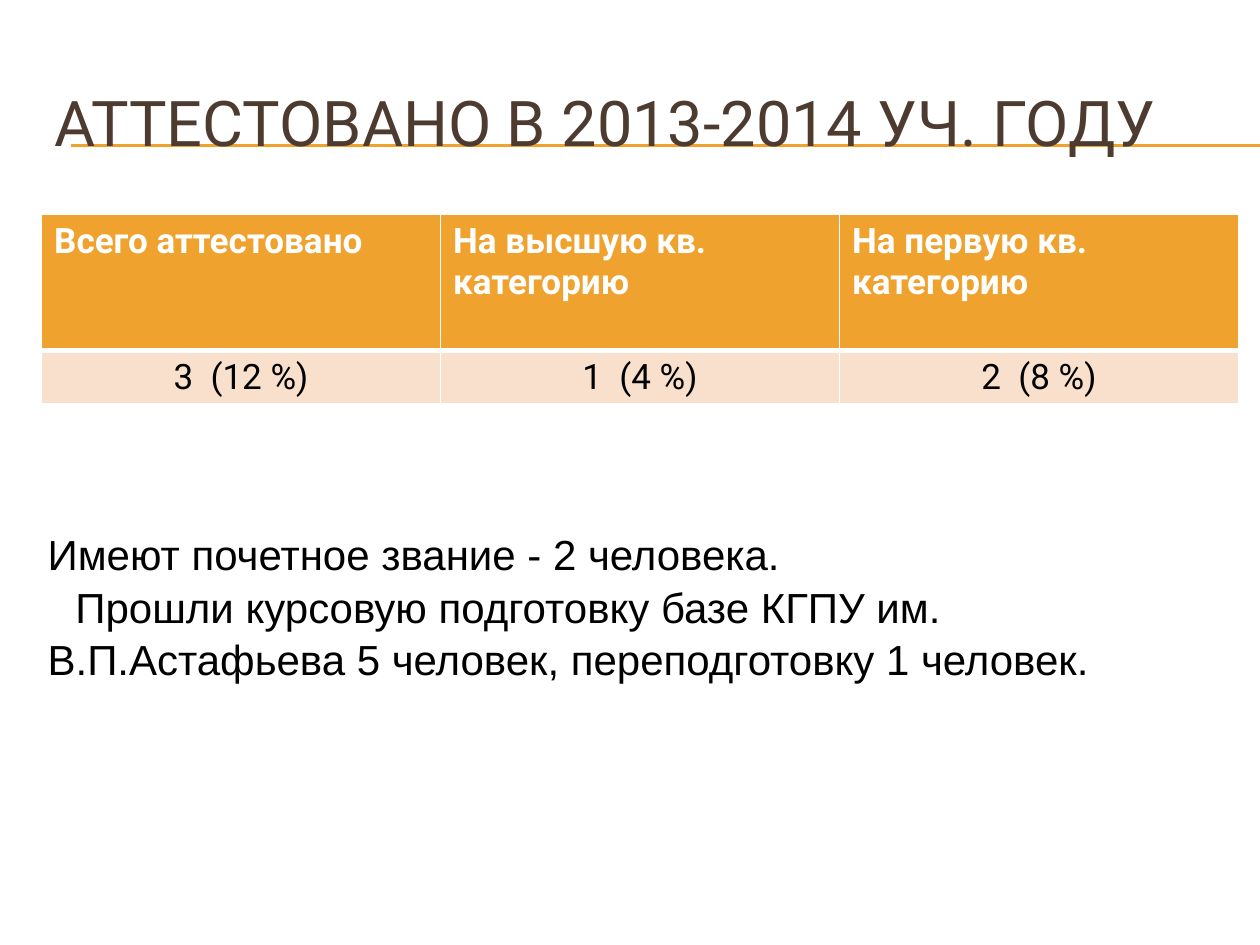
from lxml import etree
from pptx import Presentation
from pptx.dml.color import RGBColor
from pptx.enum.shapes import MSO_CONNECTOR
from pptx.enum.text import MSO_ANCHOR, PP_ALIGN
from pptx.oxml.ns import qn
from pptx.util import Inches, Pt

STRAIGHT = MSO_CONNECTOR.STRAIGHT
LEFT, CENTER = PP_ALIGN.LEFT, PP_ALIGN.CENTER
MIDDLE, BOTTOM = MSO_ANCHOR.MIDDLE, MSO_ANCHOR.BOTTOM

ORANGE = RGBColor(0xF0, 0xA2, 0x2E)
PEACH = RGBColor(0xF9, 0xE0, 0xCD)
BROWN = RGBColor(0x4E, 0x3B, 0x30)
WHITE = RGBColor(0xFF, 0xFF, 0xFF)
BLACK = RGBColor(0, 0, 0)

TITLE = "АТТЕСТОВАНО В 2013-2014 УЧ. ГОДУ"
HEADERS = ["Всего аттестовано", "На высшую кв. категорию", "На первую кв. категорию"]
RESULTS = ["3  (12 %)", "1  (4 %)", "2  (8 %)"]
NOTES = [
    ("Имеют почетное звание - 2 человека.", 0),
    ("Прошли курсовую подготовку базе КГПУ им. В.П.Астафьева 5 человек, "
     "переподготовку 1 человек.", 0.22),
]


def format_runs(p, font, size, color, bold=False):
    for r in p.runs:
        r.font.name = font
        r.font.size = Pt(size)
        r.font.bold = bold
        r.font.color.rgb = color


def add_rule(slide, y):
    line = slide.shapes.add_connector(STRAIGHT, Inches(0.56), Inches(y), Inches(10), Inches(y))
    line.line.color.rgb = ORANGE
    line.line.width = Pt(0.75)
    etree.SubElement(line._element.spPr, qn("a:effectLst"))


def set_title(slide):
    title = slide.shapes.title
    title.left, title.top = Inches(0.33), Inches(0.5)
    title.width, title.height = Inches(9.5), Inches(0.92)
    tf = title.text_frame
    tf.text = TITLE
    tf.vertical_anchor = MIDDLE
    p = tf.paragraphs[0]
    p.alignment = LEFT
    format_runs(p, "Roboto", 36, BROWN)


def set_borders(cell, bottom):
    """Draw white 1 pt borders, with the bottom one of the given width."""
    tcPr = cell._tc.get_or_add_tcPr()
    widths = {"a:lnL": 1, "a:lnR": 1, "a:lnT": 1, "a:lnB": bottom}
    for i, (tag, width) in enumerate(widths.items()):
        ln = etree.Element(qn(tag), w=str(Pt(width)))
        fill = etree.SubElement(ln, qn("a:solidFill"))
        etree.SubElement(fill, qn("a:srgbClr"), val=str(WHITE))
        tcPr.insert(i, ln)


def fill_row(table, row, texts, fill, color, align, bold, bottom):
    for cell, text in zip(table.rows[row].cells, texts):
        cell.text = text
        cell.fill.solid()
        cell.fill.fore_color.rgb = fill
        p = cell.text_frame.paragraphs[0]
        p.alignment = align
        format_runs(p, "Roboto", 20, color, bold)
        set_borders(cell, bottom)


def add_results_table(slide):
    frame = slide.shapes.add_table(2, len(HEADERS), Inches(0.33), Inches(1.7),
                                   Inches(9.5), Inches(1.5))
    table = frame.table
    table.rows[0].height = Inches(1.08)
    table.rows[1].height = Inches(0.42)
    fill_row(table, 0, HEADERS, ORANGE, WHITE, LEFT, True, 3)
    # The top border of the second row is the header's bottom border.
    fill_row(table, 1, RESULTS, PEACH, BLACK, CENTER, False, 1)
    for cell in table.rows[1].cells:
        cell._tc.tcPr.find(qn("a:lnT")).set("w", str(Pt(3)))


def add_notes_text(slide):
    box = slide.shapes.add_textbox(Inches(0.28), Inches(3.36), Inches(9.49), Inches(2.12))
    tf = box.text_frame
    tf.word_wrap = True
    tf.vertical_anchor = BOTTOM
    for i, (text, indent) in enumerate(NOTES):
        p = tf.add_paragraph() if i else tf.paragraphs[0]
        p.text = text
        p.line_spacing = 1.05
        pPr = p._p.get_or_add_pPr()
        pPr.set("marL", "0")
        pPr.set("indent", str(Inches(indent)))
        format_runs(p, "Arial", 24, BLACK)


def main():
    prs = Presentation()
    prs.slide_width, prs.slide_height = Inches(10), Inches(7.5)
    slide = prs.slides.add_slide(prs.slide_layouts[5])
    for y in (1.15, 1.16):
        add_rule(slide, y)
    # Keep the title in front of the rules.
    slide.shapes._spTree.append(slide.shapes.title._element)
    set_title(slide)
    add_results_table(slide)
    add_notes_text(slide)
    prs.save("out.pptx")


if __name__ == "__main__":
    main()
